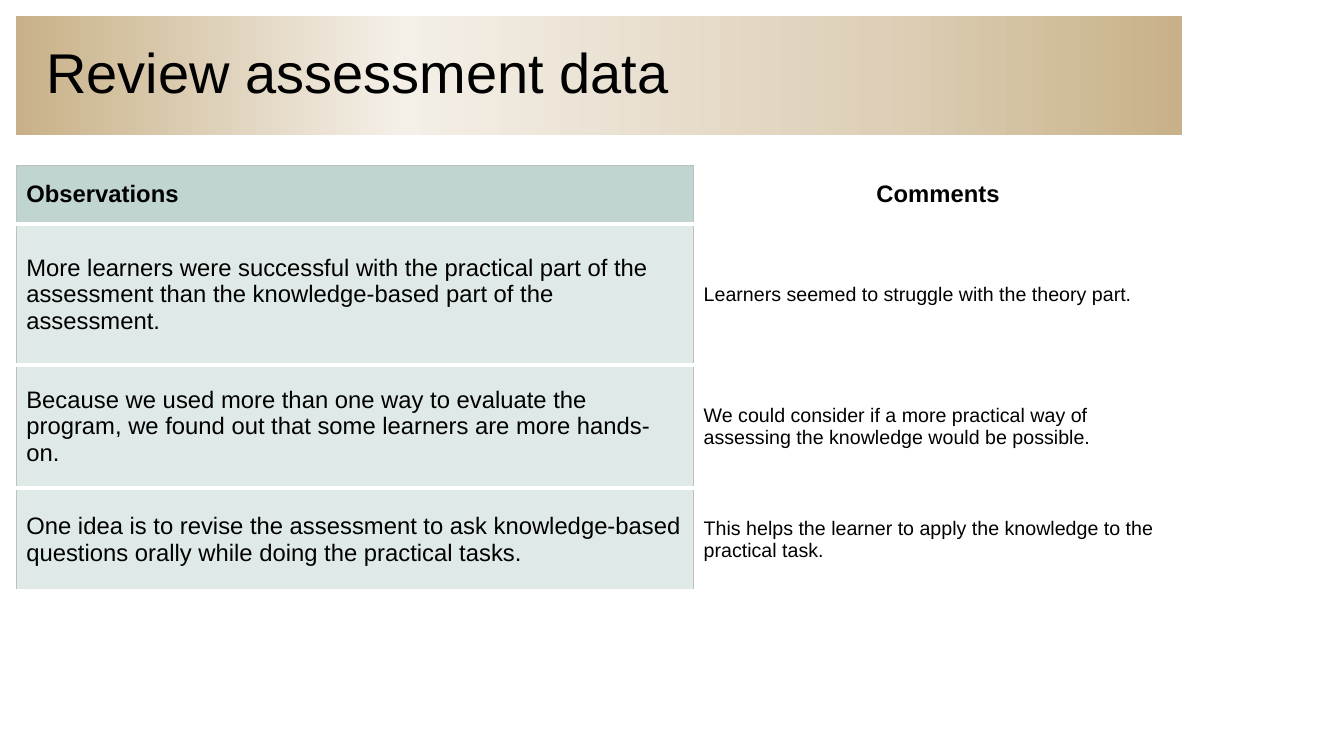
"""Build the assessment data review slide."""
from dataclasses import dataclass

from lxml.etree import SubElement
from pptx import Presentation
from pptx.dml.color import RGBColor
from pptx.enum.shapes import MSO_SHAPE
from pptx.enum.text import MSO_ANCHOR, PP_ALIGN
from pptx.oxml.ns import qn
from pptx.slide import Slide
from pptx.table import _Cell
from pptx.text.text import TextFrame
from pptx.util import Cm, Pt

FONT_NAME = "Arial"
BLACK = "000000"
WHITE = "FFFFFF"
GREY = "BFBFBF"
HEADER_FILL = "C0D4D1"
BODY_FILL = "DFE9E8"
LEFT = 0.41
WIDTH = 29.39
COLUMN_WIDTHS = (17.07, 12.32)
BANNER_STOPS = ((0, "C8B188"), (33, "F4EFE7"), (74, "DED0B8"), (100, "C8B188"))


@dataclass(frozen=True)
class ReviewRow:
    observation: str
    comment: str
    height: float
    header: bool = False


REVIEW_ROWS = (
    ReviewRow("Observations", "Comments", 1.47, header=True),
    ReviewRow(
        "More learners were successful with the practical part of the assessment "
        "than the knowledge-based part of the assessment.",
        "Learners seemed to struggle with the theory part.",
        3.56,
    ),
    ReviewRow(
        "Because we used more than one way to evaluate the program, "
        "we found out that some learners are more hands-on.",
        "We could consider if a more practical way of assessing the knowledge would be possible.",
        3.1,
    ),
    ReviewRow(
        "One idea is to revise the assessment to ask knowledge-based questions orally "
        "while doing the practical tasks.",
        "This helps the learner to apply the knowledge to the practical task.",
        2.59,
    ),
)


def color(value: str) -> RGBColor:
    return RGBColor.from_string(value)


def write_text(text_frame: TextFrame, text: str, size: float, bold: bool = False,
               alignment: PP_ALIGN = PP_ALIGN.LEFT) -> None:
    text_frame.text = text
    paragraph = text_frame.paragraphs[0]
    paragraph.alignment = alignment
    for run in paragraph.runs:
        run.font.name = FONT_NAME
        run.font.size = Pt(size)
        run.font.bold = bold
        run.font.color.rgb = color(BLACK)


def add_border(cell: _Cell, side: str, line_color: str, width: float) -> None:
    properties = cell._tc.get_or_add_tcPr()
    line = SubElement(properties, qn(f"a:ln{side}"), w=str(Pt(width)))
    fill = SubElement(line, qn("a:solidFill"))
    SubElement(fill, qn("a:srgbClr"), val=line_color)


def add_title_banner(slide: Slide) -> None:
    banner = slide.shapes.add_shape(MSO_SHAPE.RECTANGLE, Cm(LEFT), Cm(LEFT), Cm(WIDTH), Cm(3))
    banner.shadow.inherit = False
    banner.line.fill.background()
    banner.fill.gradient()
    banner.fill.gradient_angle = 0
    stop_list = banner._element.spPr.find(qn("a:gradFill")).find(qn("a:gsLst"))
    stop_list.clear()
    for position, stop_color in BANNER_STOPS:
        stop = SubElement(stop_list, qn("a:gs"), pos=str(position * 1000))
        SubElement(stop, qn("a:srgbClr"), val=stop_color)
    text_frame = banner.text_frame
    text_frame.word_wrap = True
    text_frame.margin_left = Cm(0.76)
    text_frame.vertical_anchor = MSO_ANCHOR.MIDDLE
    write_text(text_frame, "Review assessment data", 40)
    text_frame.paragraphs[0].line_spacing = 0.9


def fill_observation(cell: _Cell, row: ReviewRow) -> None:
    write_text(cell.text_frame, row.observation, 17, bold=row.header)
    add_border(cell, "L", GREY, 0.75)
    add_border(cell, "R", GREY, 0.75)
    if row.header:
        add_border(cell, "T", GREY, 0.75)
    else:
        add_border(cell, "T", WHITE, 3)
    add_border(cell, "B", WHITE, 3)
    cell.fill.solid()
    cell.fill.fore_color.rgb = color(HEADER_FILL if row.header else BODY_FILL)


def fill_comment(cell: _Cell, row: ReviewRow) -> None:
    if row.header:
        write_text(cell.text_frame, row.comment, 17, bold=True, alignment=PP_ALIGN.CENTER)
    else:
        write_text(cell.text_frame, row.comment, 14)
    add_border(cell, "L", GREY, 0.75)
    cell.fill.background()


def add_review_table(slide: Slide) -> None:
    height = sum(row.height for row in REVIEW_ROWS)
    table = slide.shapes.add_table(
        len(REVIEW_ROWS), len(COLUMN_WIDTHS), Cm(LEFT), Cm(4.17), Cm(WIDTH), Cm(height)
    ).table
    table.first_row = False
    table.horz_banding = False
    for column, width in zip(table.columns, COLUMN_WIDTHS):
        column.width = Cm(width)
    for table_row, row in zip(table.rows, REVIEW_ROWS):
        table_row.height = Cm(row.height)
        observation, comment = table_row.cells
        fill_observation(observation, row)
        fill_comment(comment, row)
        for cell in (observation, comment):
            cell.vertical_anchor = MSO_ANCHOR.MIDDLE


def main() -> None:
    presentation = Presentation()
    presentation.slide_width = Cm(33.87)
    presentation.slide_height = Cm(19.05)
    slide = presentation.slides.add_slide(presentation.slide_layouts[6])
    add_title_banner(slide)
    add_review_table(slide)
    presentation.save("out.pptx")


if __name__ == "__main__":
    main()
